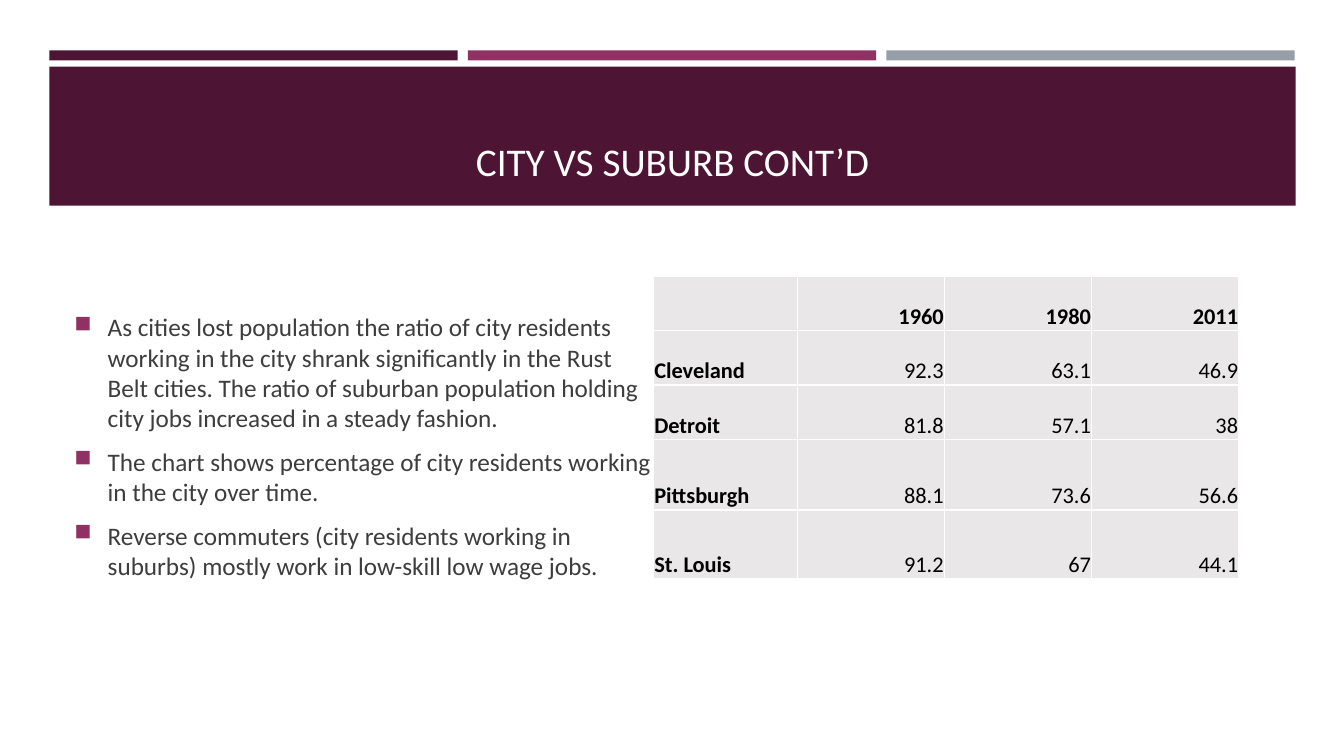
from lxml import etree
from pptx import Presentation
from pptx import util as u
from pptx.dml.color import RGBColor
from pptx.enum import shapes, text
from pptx.oxml import ns

COLORS = {
    "plum": "4D1434", "magenta": "903163", "slate": "969FA7", "white": "FFFFFF",
    "body": "3D3D3D", "black": "000000", "cell": "E9E7E8",
}
TITLE = "CITY VS SUBURB CONT’D"
POINTS = [
    "As cities lost population the ratio of city residents working in the city shrank "
    "significantly in the Rust Belt cities. The ratio of suburban population holding "
    "city jobs increased in a steady fashion.",
    "The chart shows percentage of city residents working in the city over time.",
    "Reverse commuters (city residents working in suburbs) mostly work in low-skill "
    "low wage jobs.",
]
CITY_SHARES = [
    ["", "1960", "1980", "2011"],
    ["Cleveland", "92.3", "63.1", "46.9"],
    ["Detroit", "81.8", "57.1", "38"],
    ["Pittsburgh", "88.1", "73.6", "56.6"],
    ["St. Louis", "91.2", "67", "44.1"],
]
COLUMN_WIDTHS = [1.43, 1.46, 1.46, 1.46]
ROW_HEIGHTS = [0.54, 0.54, 0.54, 0.7, 0.68]


def add_xml(parent, tag, **attributes):
    return etree.SubElement(parent, ns.qn(tag), attributes)


class SlideBuilder:
    font = "Calibri"

    def __init__(self, slide):
        self.slide = slide

    def color(self, name):
        return RGBColor.from_string(COLORS[name])

    def style(self, paragraph, size, color, align, bold=False):
        paragraph.alignment = align
        for run in paragraph.runs:
            run.font.name = self.font
            run.font.size = u.Pt(size)
            run.font.bold = bold
            run.font.color.rgb = self.color(color)

    def bar(self, left, top, width, height, color):
        bar = self.slide.shapes.add_shape(
            shapes.MSO_SHAPE.RECTANGLE, *map(u.Inches, (left, top, width, height)))
        bar.shadow.inherit = False
        bar.fill.solid()
        bar.fill.fore_color.rgb = self.color(color)
        bar.line.fill.background()

    def textbox(self, left, top, width, height, content, anchor):
        frame = self.slide.shapes.add_textbox(
            *map(u.Inches, (left, top, width, height))).text_frame
        frame.word_wrap = True
        frame.vertical_anchor = anchor
        frame.text = content
        return frame

    def title(self, left, top, width, height, content):
        frame = self.textbox(left, top, width, height, content, text.MSO_ANCHOR.BOTTOM)
        self.style(frame.paragraphs[0], 28, "white", text.PP_ALIGN.CENTER)

    def bullets(self, left, top, width, height, points):
        frame = self.textbox(left, top, width, height, "\n".join(points),
                             text.MSO_ANCHOR.MIDDLE)
        for paragraph in frame.paragraphs:
            self.style(paragraph, 18, "body", text.PP_ALIGN.LEFT)
            paragraph.space_before = u.Pt(3.6)
            paragraph.space_after = u.Pt(6)
            properties = paragraph._p.get_or_add_pPr()
            properties.set("marL", str(u.Inches(0.33)))
            properties.set("indent", str(-u.Inches(0.33)))
            add_xml(add_xml(properties, "a:buClr"), "a:srgbClr", val=COLORS["magenta"])
            add_xml(properties, "a:buSzPct", val="92000")
            add_xml(properties, "a:buChar", char="■")

    def table(self, left, top, widths, heights, rows):
        table = self.slide.shapes.add_table(
            len(rows), len(widths),
            *map(u.Inches, (left, top, sum(widths), sum(heights)))).table
        table.first_row = table.horz_banding = False
        for column, width in zip(table.columns, widths):
            column.width = u.Inches(width)
        for r, (row, height) in enumerate(zip(rows, heights)):
            table.rows[r].height = u.Inches(height)
            for c, value in enumerate(row):
                self.cell(table.cell(r, c), value, bold=r == 0 or c == 0,
                          align=text.PP_ALIGN.RIGHT if c else text.PP_ALIGN.LEFT)

    def cell(self, cell, value, bold, align):
        cell.margin_left = cell.margin_right = cell.margin_top = u.Inches(0.01)
        cell.margin_bottom = 0
        cell.vertical_anchor = text.MSO_ANCHOR.BOTTOM
        properties = cell._tc.get_or_add_tcPr()
        for side in "LRTB":
            border = add_xml(properties, f"a:ln{side}", w=str(u.Pt(1)))
            add_xml(add_xml(border, "a:solidFill"), "a:srgbClr", val=COLORS["white"])
        cell.fill.solid()
        cell.fill.fore_color.rgb = self.color("cell")
        cell.text_frame.text = value
        self.style(cell.text_frame.paragraphs[0], 16, "black", align, bold)


def main():
    deck = Presentation()
    deck.slide_width, deck.slide_height = u.Inches(13.33), u.Inches(7.5)
    builder = SlideBuilder(deck.slides.add_slide(deck.slide_layouts[6]))
    for i, accent in enumerate(["plum", "magenta", "slate"]):
        builder.bar(0.49 + 4.15 * i, 0.5, 4.05, 0.1, accent)
    builder.bar(0.49, 0.66, 12.36, 1.38, "plum")
    builder.title(0.64, 0.8, 12.06, 1.08, TITLE)
    builder.bullets(0.64, 2.44, 5.93, 3.97, POINTS)
    builder.table(6.48, 2.74, COLUMN_WIDTHS, ROW_HEIGHTS, CITY_SHARES)
    deck.save("out.pptx")


if __name__ == "__main__":
    main()
